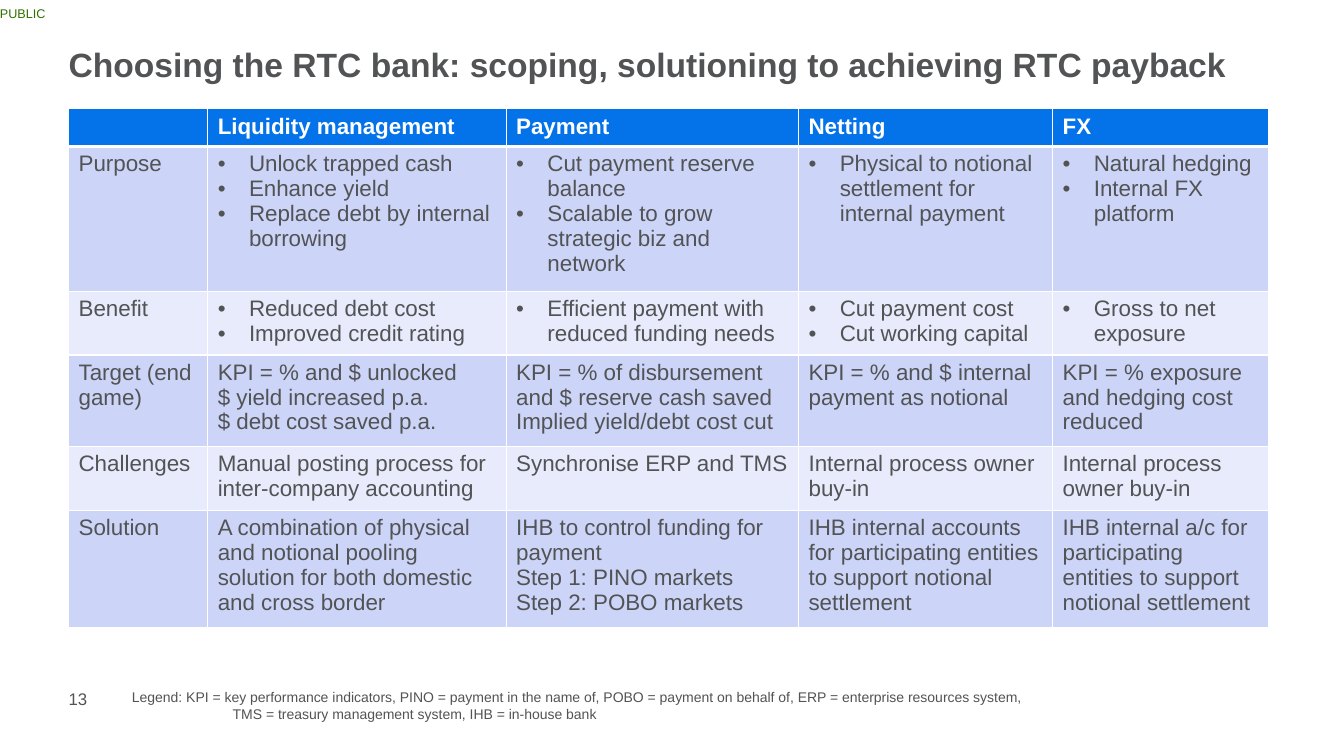
from dataclasses import dataclass

from lxml import etree
from pptx import Presentation
from pptx.dml.color import RGBColor
from pptx.enum.text import MSO_ANCHOR, MSO_AUTO_SIZE
from pptx.oxml.ns import qn
from pptx.util import Inches, Pt

TOP, MIDDLE = MSO_ANCHOR.TOP, MSO_ANCHOR.MIDDLE
NO_FIT = MSO_AUTO_SIZE.NONE

FONT = "Arial"
GREY, GREEN, WHITE, BLUE = "525355", "317100", "FFFFFF", "0473EA"
BANDS = ("CCD5F7", "E7EBFB")
TABLE_SIZE = 16
BULLET_INDENT = Inches(0.31)
BORDER, HEADER_BORDER = Pt(1), Pt(3)
COLUMN_WIDTHS = (1.38, 2.96, 2.9, 2.52, 2.14)
HEADINGS = ("", "Liquidity management", "Payment", "Netting", "FX")
TITLE = "Choosing the RTC bank: scoping, solutioning to achieving RTC payback"


@dataclass(frozen=True)
class Style:
    size: float
    colour: str = GREY
    bold: bool = False
    spacing: float | None = None


@dataclass(frozen=True)
class Label:
    lines: tuple[str, ...]
    left: float
    top: float
    width: float
    height: float
    style: Style
    anchor: MSO_ANCHOR = TOP
    padded: bool = False


@dataclass(frozen=True)
class Row:
    height: float
    cells: tuple[tuple[str, ...], ...]
    bulleted: bool = False


LABELS = (
    Label(("PUBLIC",), 0, 0, 0.73, 0.26, Style(9, GREEN), MIDDLE),
    Label(("13",), 0.68, 6.84, 1.34, 0.17, Style(12, spacing=14)),
    Label(
        (
            "Legend: KPI = key performance indicators, PINO = payment in the name of, "
            "POBO = payment on behalf of, ERP = enterprise resources system,",
            "\t\tTMS = treasury management system, IHB = in-house bank",
        ),
        1.21, 6.78, 9.87, 0.44, Style(10), padded=True,
    ),
)

ROWS = (
    Row(0.36, tuple((heading,) for heading in HEADINGS)),
    Row(1.44, (
        ("Purpose",),
        ("Unlock trapped cash", "Enhance yield", "Replace debt by internal borrowing"),
        ("Cut payment reserve balance", "Scalable to grow strategic biz and network"),
        ("Physical to notional settlement for internal payment",),
        ("Natural hedging", "Internal FX platform"),
    ), bulleted=True),
    Row(0.63, (
        ("Benefit",),
        ("Reduced debt cost", "Improved credit rating"),
        ("Efficient payment with reduced funding needs",),
        ("Cut payment cost", "Cut working capital"),
        ("Gross to net exposure",),
    ), bulleted=True),
    Row(0.91, (
        ("Target (end game)",),
        ("KPI = % and $ unlocked", "$ yield increased p.a.", "$ debt cost saved p.a."),
        ("KPI = % of disbursement and $ reserve cash saved", "Implied yield/debt cost cut"),
        ("KPI = % and $ internal payment as notional",),
        ("KPI = % exposure and hedging cost reduced",),
    )),
    Row(0.63, (
        ("Challenges",),
        ("Manual posting process for inter-company accounting",),
        ("Synchronise ERP and TMS",),
        ("Internal process owner buy-in",),
        ("Internal process owner buy-in",),
    )),
    Row(1.17, (
        ("Solution",),
        ("A combination of physical and notional pooling solution for both domestic "
         "and cross border",),
        ("IHB to control funding for payment", "Step 1: PINO markets", "Step 2: POBO markets"),
        ("IHB internal accounts for participating entities to support notional settlement",),
        ("IHB internal a/c for participating entities to support notional settlement",),
    )),
)


def colour(value: str) -> RGBColor:
    return RGBColor.from_string(value)


def apply(target, values: dict) -> None:
    for name, value in values.items():
        setattr(target, name, value)


def add_bullet(para) -> None:
    properties = para._p.get_or_add_pPr()
    properties.set("marL", str(BULLET_INDENT))
    properties.set("indent", str(-BULLET_INDENT))
    etree.SubElement(properties, qn("a:buFont")).set("typeface", FONT)
    etree.SubElement(properties, qn("a:buChar")).set("char", "•")


def write(frame, lines: tuple[str, ...], style: Style, bulleted: bool = False) -> None:
    for index, line in enumerate(lines):
        para = frame.add_paragraph() if index else frame.paragraphs[0]
        if bulleted:
            add_bullet(para)
        if style.spacing:
            para.line_spacing = Pt(style.spacing)
        if not line:
            ending = etree.SubElement(para._p, qn("a:endParaRPr"))
            ending.set("sz", str(style.size * 100))
            continue
        span = para.add_run()
        span.text = line
        apply(span.font, {"name": FONT, "size": Pt(style.size), "bold": style.bold})
        span.font.color.rgb = colour(style.colour)


def set_frame(frame, anchor: MSO_ANCHOR, padded: bool) -> None:
    apply(frame, {"word_wrap": True, "auto_size": NO_FIT, "vertical_anchor": anchor})
    if not padded:
        sides = ("left", "top", "right", "bottom")
        apply(frame, {f"margin_{side}": 0 for side in sides})


def add_label(page, label: Label) -> None:
    bounds = (label.left, label.top, label.width, label.height)
    box = page.shapes.add_textbox(*map(Inches, bounds))
    set_frame(box.text_frame, label.anchor, label.padded)
    write(box.text_frame, label.lines, label.style)


def add_borders(cell, row_index: int) -> None:
    widths = {
        "a:lnL": BORDER,
        "a:lnR": BORDER,
        "a:lnT": HEADER_BORDER if row_index == 1 else BORDER,
        "a:lnB": HEADER_BORDER if row_index == 0 else BORDER,
    }
    for tag, width in widths.items():
        line = etree.SubElement(cell._tc.get_or_add_tcPr(), qn(tag))
        line.set("w", str(width))
        fill = etree.SubElement(line, qn("a:solidFill"))
        etree.SubElement(fill, qn("a:srgbClr")).set("val", WHITE)


def add_comparison(page) -> None:
    total = sum(row.height for row in ROWS)
    bounds = (0.68, 1.08, sum(COLUMN_WIDTHS), total)
    frame = page.shapes.add_table(len(ROWS), len(COLUMN_WIDTHS), *map(Inches, bounds))
    table = frame.table
    table.horz_banding = False
    for column, width in zip(table.columns, COLUMN_WIDTHS):
        column.width = Inches(width)
    for row_index, row in enumerate(ROWS):
        table.rows[row_index].height = Inches(row.height)
        header = row_index == 0
        style = Style(TABLE_SIZE, WHITE, True) if header else Style(TABLE_SIZE)
        for column_index, lines in enumerate(row.cells):
            cell = table.cell(row_index, column_index)
            write(cell.text_frame, lines, style, row.bulleted and column_index > 0)
            add_borders(cell, row_index)
            cell.fill.solid()
            cell.fill.fore_color.rgb = colour(BLUE if header else BANDS[(row_index - 1) % 2])


def add_title(page) -> None:
    title = page.shapes.title
    apply(title, {"left": Inches(0.68), "top": Inches(0.45),
                  "width": Inches(12.27), "height": Inches(0.54)})
    set_frame(title.text_frame, TOP, False)
    write(title.text_frame, (TITLE,), Style(24, bold=True, spacing=28))
    title.text_frame.paragraphs[0].alignment = PP_LEFT


def main() -> None:
    deck = Presentation()
    apply(deck, {"slide_width": Inches(13.33), "slide_height": Inches(7.5)})
    page = deck.slides.add_slide(deck.slide_layouts[5])
    add_comparison(page)
    add_title(page)
    for label in LABELS:
        add_label(page, label)
    deck.save("out.pptx")


from pptx.enum.text import PP_ALIGN

PP_LEFT = PP_ALIGN.LEFT

if __name__ == "__main__":
    main()
